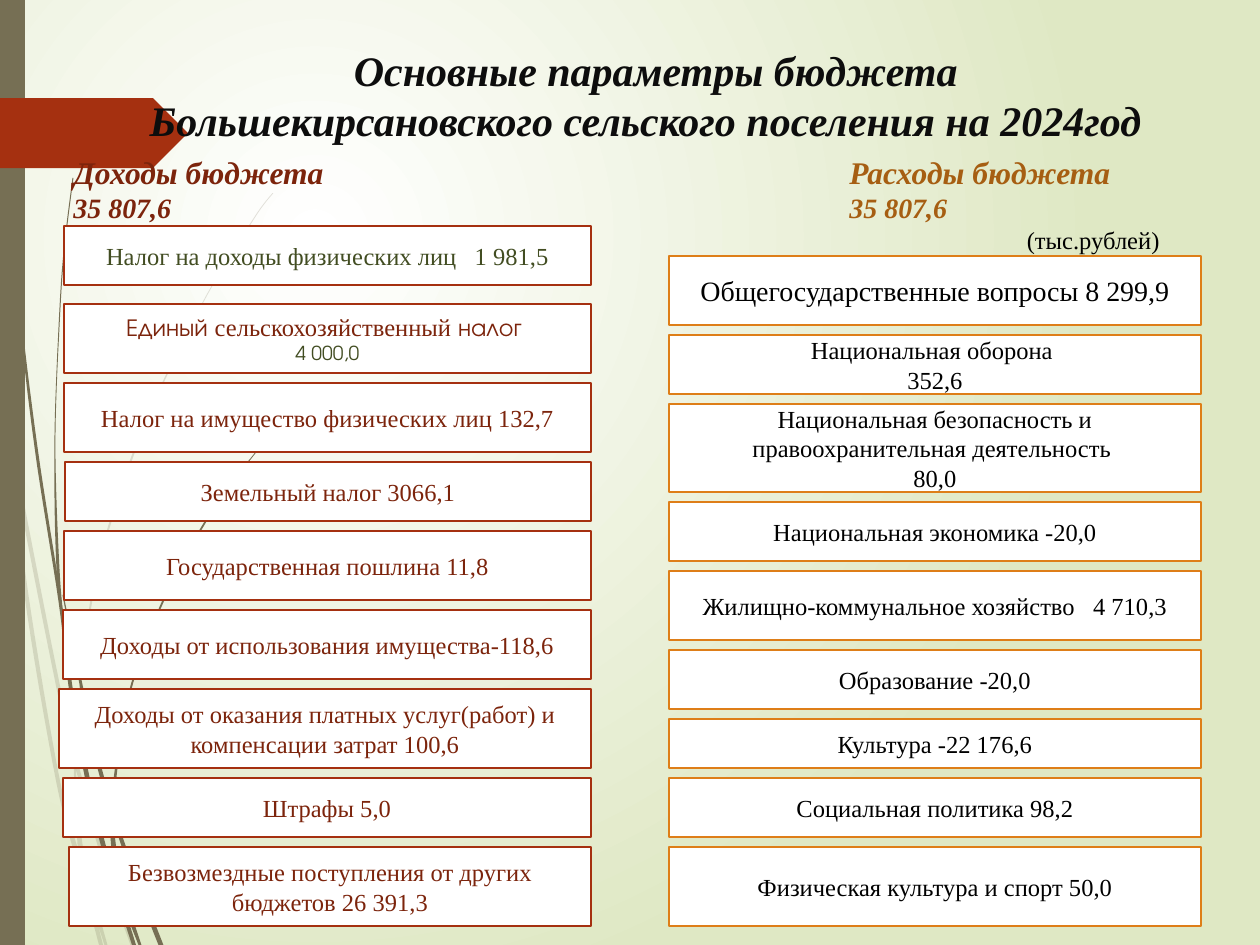
from lxml import etree
from pptx import Presentation
from pptx.dml.color import RGBColor
from pptx.enum.shapes import MSO_SHAPE
from pptx.enum.text import MSO_ANCHOR, MSO_AUTO_SIZE, PP_ALIGN
from pptx.oxml.ns import qn
from pptx.util import Pt

PX = 7257  # EMU per px, 126 px to the inch
W, H = 1260, 945
GAP = 10
SERIF, SANS = "Times New Roman", "TeX Gyre Adventor"
LEFT, CENTER, RIGHT = PP_ALIGN.LEFT, PP_ALIGN.CENTER, PP_ALIGN.RIGHT
RECT, PENTAGON = MSO_SHAPE.RECTANGLE, MSO_SHAPE.PENTAGON
OLIVE, RED, ORANGE = "766F54", "A53010", "DE7E18"
DARK_RED, DARK_ORANGE, DARK_GREEN = "7C240C", "A65E12", "424D22"
BLACK, WHITE = "000000", "FFFFFF"

# Strands as (centre x, y, width) points
PALE_STRANDS = [
    [(0, 366, 2), (12, 449, 4), (52, 656, 4), (74, 755, 4), (108, 873, 4), (133, 945, 5)],
    [(10, 441, 1), (26, 592, 4), (58, 781, 4), (81, 868, 5), (101, 945, 4)],
    [(273, 193, 1), (253, 220, 1), (200, 308, 1), (139, 439, 2), (95, 582, 2),
     (76, 736, 2), (78, 814, 3), (84, 868, 6), (106, 945, 3)],
]
DARK_STRANDS = [
    [(3, 0, 1), (7, 139, 1), (18, 293, 2), (36, 447, 3), (60, 601, 3),
     (73, 702, 4), (99, 829, 5), (134, 945, 4)],
    [(63, 595, 1), (94, 745, 4), (116, 823, 4), (140, 891, 5), (161, 945, 5)],
    [(73, 178, 1), (65, 243, 1), (60, 309, 1), (55, 440, 1), (58, 568, 3), (65, 636, 1)],
    [(272, 433, 1), (256, 452, 1), (212, 511, 2), (164, 599, 2), (129, 695, 2),
     (113, 798, 3), (114, 850, 5), (121, 890, 6), (140, 945, 3)],
]

# Each row: left edge, height, lines; a line is text or runs of (text, font)
INCOME_TOP = [(64, 59, ["Налог на доходы физических лиц   1 981,5"])]
INCOME = [
    (64, 69, [[("Единый ", SANS), ("сельскохозяйственный", SERIF), (" налог ", SANS)],
              [("4 000,0", SANS)]]),
    (64, 69, ["Налог на имущество физических лиц 132,7"]),
    (65, 59, ["Земельный налог 3066,1"]),
    (64, 69, ["Государственная пошлина 11,8"]),
    (63, 69, ["Доходы от использования имущества-118,6"]),
    (59, 79, ["Доходы от оказания платных услуг(работ) и компенсации затрат 100,6"]),
    (63, 59, ["Штрафы 5,0"]),
    (69, 79, ["Безвозмездные поступления от других бюджетов 26 391,3"]),
]
SPENDING = [(669, h, lines) for h, lines in [
    (69, ["Общегосударственные вопросы 8 299,9"]),
    (59, ["Национальная оборона ", "352,6"]),
    (88, ["Национальная безопасность и правоохранительная деятельность ", "80,0"]),
    (59, ["Национальная экономика -20,0"]),
    (69, ["Жилищно-коммунальное хозяйство   4 710,3"]),
    (59, ["Образование -20,0"]),
    (49, ["Культура -22 176,6"]),
    (59, ["Социальная политика 98,2"]),
    (79, ["Физическая культура и спорт 50,0"]),
]]


def px(*values):
    return [round(v * PX) for v in values]


def rgb(value):
    return RGBColor.from_string(value)


def style(p, size, color, align=LEFT, strong=False):
    p.alignment = align
    f = p.font
    f.name, f.size, f.bold, f.italic = SERIF, Pt(size), strong, strong
    f.color.rgb = rgb(color)


def write(tf, lines):
    """Fill a text frame, one paragraph a line, and return the paragraphs."""
    tf.word_wrap = True
    for i, line in enumerate(lines):
        p = tf.add_paragraph() if i else tf.paragraphs[0]
        if isinstance(line, str):
            p.add_run().text = line
        else:
            for text, font in line:
                r = p.add_run()
                r.text, r.font.name = text, font
    return tf.paragraphs


def paint(sp, fill, line=None):
    sp.shadow.inherit = False
    sp.fill.solid()
    sp.fill.fore_color.rgb = rgb(fill)
    if line:
        sp.line.color.rgb = rgb(line)
        sp.line.width = Pt(1.25)
    else:
        sp.line.fill.background()


def smooth(points, steps=8):
    """Catmull-Rom curve through the points."""
    ends = [points[0], *points, points[-1]]
    curve = []
    for a, b, c, d in zip(ends, ends[1:], ends[2:], ends[3:]):
        for t in (i / steps for i in range(steps)):
            curve.append([(2 * q + (r - p) * t + (2 * p - 5 * q + 4 * r - s) * t ** 2
                           + (3 * q - p - 3 * r + s) * t ** 3) / 2
                          for p, q, r, s in zip(a, b, c, d)])
    return curve + [points[-1]]


def strand(s, points, alpha=None):
    curve = smooth(points)
    outline = [(x - w / 2, y) for x, y, w in curve]
    outline += [(x + w / 2, y) for x, y, w in reversed(curve)]
    outline = [px(x, y) for x, y in outline]
    builder = s.shapes.build_freeform(*outline[0], scale=1.0)
    builder.add_line_segments(outline[1:], close=True)
    sp = builder.convert_to_shape()
    paint(sp, OLIVE)
    if alpha:
        color = sp._element.spPr.find(qn("a:solidFill"))[0]
        etree.SubElement(color, qn("a:alpha")).set("val", str(alpha * 1000))


def backdrop(s):
    # Radial gradient
    fill = s.background.fill
    fill.gradient()
    for stop, color in zip(fill.gradient_stops, (WHITE, "DFE8C4")):
        stop.color.rgb = rgb(color)
    lin = next(s._element.iter(qn("a:lin")))
    route = etree.Element(qn("a:path"), {"path": "circle"})
    etree.SubElement(route, qn("a:fillToRect"),
                     {"l": "50000", "t": "50000", "r": "100000", "b": "100000"})
    lin.getparent().replace(lin, route)
    # Strands, side bar and arrow
    for points in PALE_STRANDS:
        strand(s, points, alpha=20)
    for points in DARK_STRANDS:
        strand(s, points)
    paint(s.shapes.add_shape(RECT, *px(0, 0, 25, H)), OLIVE)
    paint(s.shapes.add_shape(PENTAGON, *px(0, 98, 188, 70)), RED)


def title(s, x, y, w, h):
    sp = s.shapes.title
    sp.left, sp.top, sp.width, sp.height = px(x, y, w, h)
    tf = sp.text_frame
    tf.auto_size, tf.vertical_anchor = MSO_AUTO_SIZE.NONE, MSO_ANCHOR.TOP
    lines = ["Основные параметры бюджета ",
             "Большекирсановского сельского поселения на 2024год"]
    for p, align in zip(write(tf, lines), (CENTER, LEFT)):
        style(p, 24, "0D0D0D", align, strong=True)
    s.shapes._spTree.append(sp._element)  # in front of the arrow


def heading(s, x, y, w, h, color, name, total, unit=None):
    tf = s.shapes.add_textbox(*px(x, y, w, h)).text_frame
    ps = write(tf, [name, total] + ([unit] if unit else []))
    style(ps[0], 18, color, strong=True)
    style(ps[1], 16, color, strong=True)
    if unit:
        style(ps[2], 14, BLACK, RIGHT)


def stack(s, top, right, rows, line, color):
    """Boxes one under another, all ending at the right edge."""
    boxes = []
    for left, h, lines in rows:
        sp = s.shapes.add_shape(RECT, *px(left, top, right - left, h))
        paint(sp, WHITE, line)
        sp.text_frame.vertical_anchor = MSO_ANCHOR.MIDDLE
        for p in write(sp.text_frame, lines):
            style(p, 14, color, CENTER)
        boxes.append(sp)
        top += h + GAP
    return boxes


def main():
    prs = Presentation()
    prs.slide_width, prs.slide_height = px(W, H)
    s = prs.slides.add_slide(prs.slide_layouts[5])
    backdrop(s)
    heading(s, 61, 147, 323, 84, DARK_RED, "Доходы бюджета", "35 807,6")
    heading(s, 837, 147, 335, 115, DARK_ORANGE, "Расходы бюджета", "35 807,6", "(тыс.рублей)")
    stack(s, 226, 591, INCOME_TOP, RED, DARK_GREEN)
    farm_tax = stack(s, 304, 591, INCOME, RED, DARK_RED)[0]
    style(farm_tax.text_frame.paragraphs[1], 11, DARK_GREEN, CENTER)
    general = stack(s, 256, 1201, SPENDING, ORANGE, BLACK)[0]
    style(general.text_frame.paragraphs[0], 16, BLACK, CENTER)
    title(s, 137, 38, 1048, 115)
    prs.save("out.pptx")


if __name__ == "__main__":
    main()
